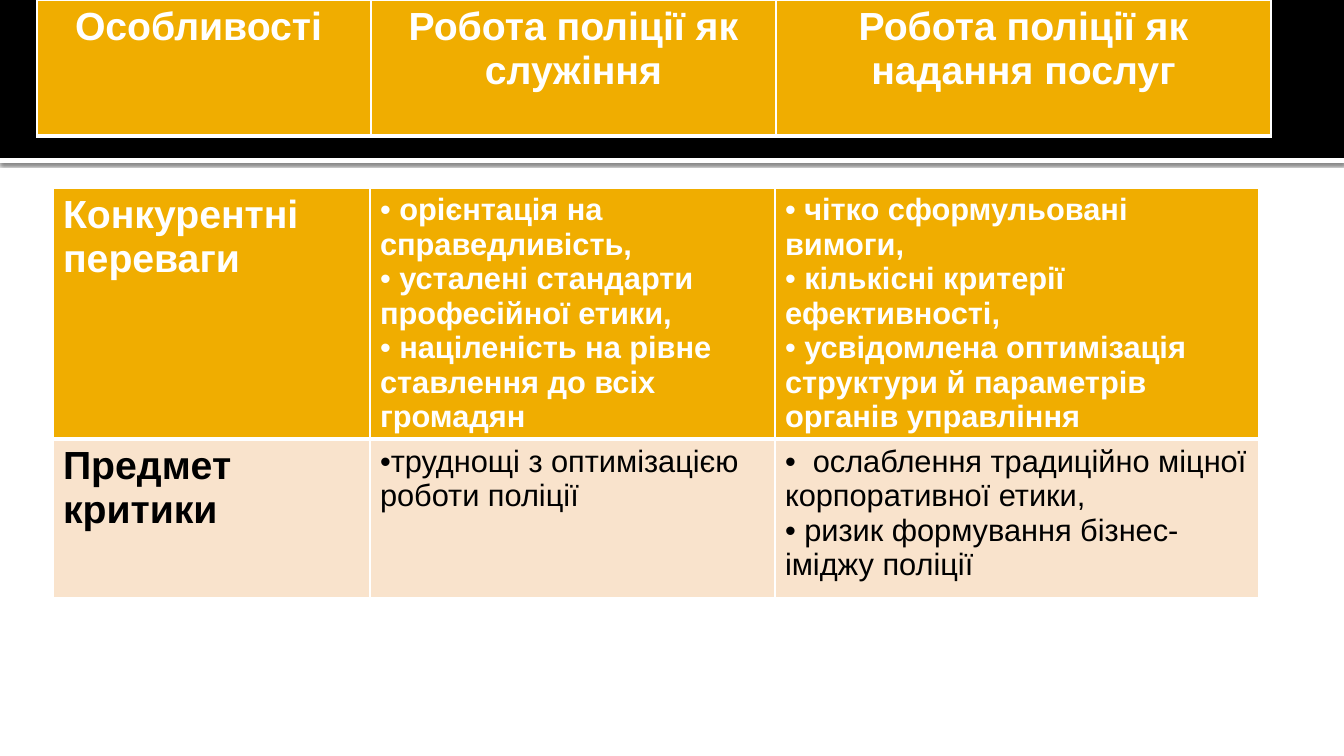
from lxml.etree import SubElement
from pptx import Presentation
from pptx.dml.color import RGBColor
from pptx.enum.shapes import MSO_SHAPE
from pptx.enum.text import PP_ALIGN
from pptx.oxml import parse_xml
from pptx.oxml.ns import nsdecls, qn
from pptx.util import Emu, Pt

WHITE = RGBColor(0xFF, 0xFF, 0xFF)
BLACK = RGBColor(0x00, 0x00, 0x00)
AMBER = RGBColor(0xF0, 0xAD, 0x00)
PEACH = RGBColor(0xF9, 0xE3, 0xCC)

HEADING_SIZE = 28
BODY_SIZE = 22
THIN, THICK = 1, 3


def px(length):
    """Turn pixels (100.8 to the inch) into EMU."""
    return Emu(round(length * 914400 / 100.8))


class SlideBuilder:
    font = "Arial"

    def __init__(self, page):
        self.page = page

    def band(self, left, top, width, height, color):
        box = self.page.shapes.add_shape(
            MSO_SHAPE.RECTANGLE, px(left), px(top), px(width), px(height))
        box.shadow.inherit = False
        box.fill.solid()
        box.fill.fore_color.rgb = color
        box.line.fill.background()
        return box

    def soft_shadow(self, box):
        effects = box._element.spPr.find(qn("a:effectLst"))
        effects.append(parse_xml(
            f'<a:outerShdw {nsdecls("a")} blurRad="{Pt(2.5)}" dist="{Pt(0.8)}" '
            'dir="5400000" algn="tl" rotWithShape="0">'
            f'<a:srgbClr val="{BLACK}"><a:alpha val="60000"/></a:srgbClr>'
            '</a:outerShdw>'))

    def table(self, left, top, widths, heights):
        frame = self.page.shapes.add_table(
            len(heights), len(widths), px(left), px(top),
            px(sum(widths)), px(sum(heights)))
        grid = frame.table
        grid.first_row = False
        grid.horz_banding = False
        for column, width in zip(grid.columns, widths):
            column.width = px(width)
        for row, height in zip(grid.rows, heights):
            row.height = px(height)
        return grid

    def cell(self, cell, lines, size, color, fill, bold=True,
             align=PP_ALIGN.LEFT, bullets=False):
        cell.fill.solid()
        cell.fill.fore_color.rgb = fill
        cell.text_frame.text = "\n".join(lines)
        for para in cell.text_frame.paragraphs:
            para.alignment = align
            if bullets:
                self.bullet(para)
            for span in para.runs:
                span.font.name = self.font
                span.font.size = Pt(size)
                span.font.bold = bold
                span.font.color.rgb = color

    def bullet(self, para):
        properties = para._p.get_or_add_pPr()
        properties.set("marL", "0")
        properties.set("indent", "0")
        SubElement(properties, qn("a:buFont"), typeface=self.font)
        SubElement(properties, qn("a:buChar"), char="•")

    def borders(self, cell, top, bottom):
        properties = cell._tc.get_or_add_tcPr()
        edges = {"lnL": THIN, "lnR": THIN, "lnT": top, "lnB": bottom}
        for place, (edge, width) in enumerate(edges.items()):
            properties.insert(place, parse_xml(
                f'<a:{edge} {nsdecls("a")} w="{Pt(width)}"><a:solidFill>'
                f'<a:srgbClr val="{WHITE}"/></a:solidFill></a:{edge}>'))


HEADINGS = ["Особливості ", "Робота поліції як служіння",
            "Робота поліції як надання послуг"]

# Row title, bullets per column, text colour, fill, bold, top and bottom edges
ROWS = [
    ("Конкурентні переваги",
     [[" орієнтація на справедливість,",
       " усталені стандарти професійної етики,",
       " націленість на рівне ставлення до всіх громадян"],
      [" чітко сформульовані вимоги,",
       " кількісні критерії ефективності,",
       " усвідомлена оптимізація структури й параметрів органів управління"]],
     WHITE, AMBER, True, THIN, THICK),
    ("Предмет критики",
     [["труднощі з оптимізацією роботи поліції"],
      ["  ослаблення традиційно міцної корпоративної етики,",
       " ризик формування бізнес-іміджу поліції"]],
     BLACK, PEACH, False, THICK, THIN),
]


def main():
    deck = Presentation()
    deck.slide_width = px(1344)
    deck.slide_height = px(756)
    builder = SlideBuilder(deck.slides.add_slide(deck.slide_layouts[6]))

    # Black title band with a white rule under it
    rule = builder.band(0, 158, 1344, 5, WHITE)
    builder.soft_shadow(rule)
    builder.band(0, 0, 1344, 158, BLACK)

    # Column headings
    header = builder.table(37, 0, [334, 405, 495], [136])
    for cell, heading in zip(header.rows[0].cells, HEADINGS):
        builder.cell(cell, [heading], HEADING_SIZE, WHITE, AMBER,
                     align=PP_ALIGN.CENTER)
        builder.borders(cell, THIN, THICK)

    # Comparison rows
    comparison = builder.table(53, 188, [317, 405, 484], [250, 158])
    for row, content in zip(comparison.rows, ROWS):
        title, columns, color, fill, bold, top, bottom = content
        title_cell, *body_cells = row.cells
        builder.cell(title_cell, [title], HEADING_SIZE, color, fill)
        for cell, lines in zip(body_cells, columns):
            builder.cell(cell, lines, BODY_SIZE, color, fill, bold,
                         bullets=True)
        for cell in row.cells:
            builder.borders(cell, top, bottom)

    deck.save("out.pptx")


if __name__ == "__main__":
    main()
